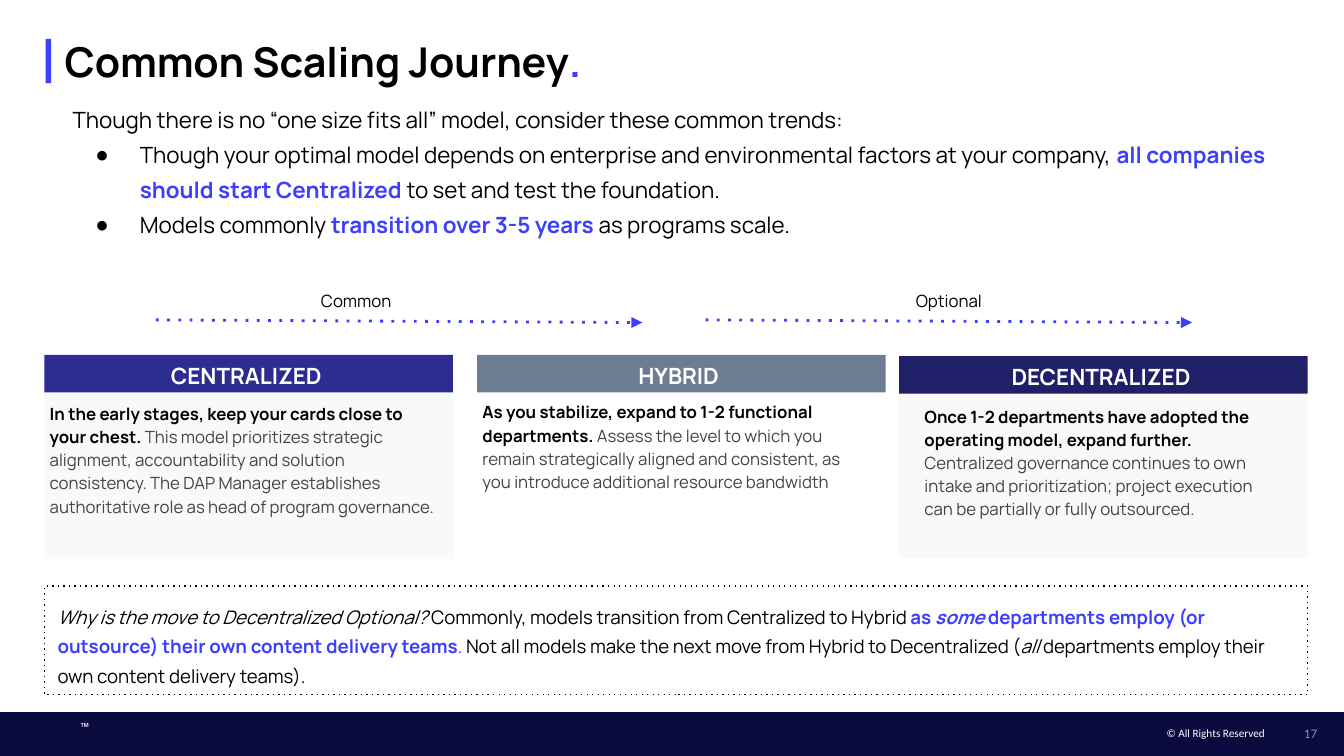
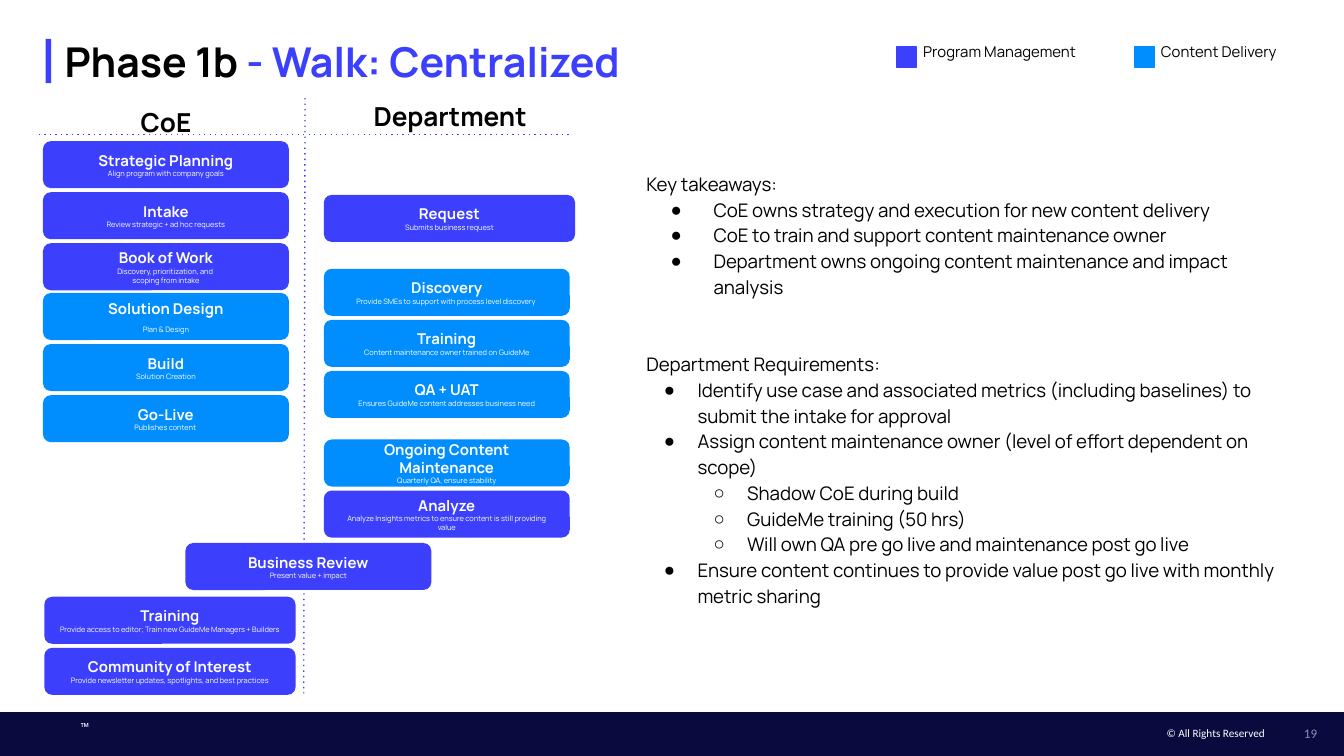
from lxml import etree
from pptx import Presentation
from pptx.dml.color import RGBColor
from pptx.enum.shapes import MSO_CONNECTOR, MSO_SHAPE
from pptx.enum.text import MSO_ANCHOR, MSO_AUTO_SIZE, PP_ALIGN
from pptx.oxml.ns import qn
from pptx.util import Pt

PX = 9144  # 100 px to the inch
RECT, ROUNDED = MSO_SHAPE.RECTANGLE, MSO_SHAPE.ROUNDED_RECTANGLE
STRAIGHT = MSO_CONNECTOR.STRAIGHT
TOP, MIDDLE = MSO_ANCHOR.TOP, MSO_ANCHOR.MIDDLE
LEFT, CENTER, RIGHT = PP_ALIGN.LEFT, PP_ALIGN.CENTER, PP_ALIGN.RIGHT
NO_FIT = MSO_AUTO_SIZE.NONE

BLUE, SKY, NAVY = "3C40FD", "008EFF", "0A0A3F"
BLACK, WHITE, GREY = "000000", "FFFFFF", "434343"
PLAIN = {}
ACCENT = {"color": BLUE}
STRONG = {"color": BLUE, "bold": True}
ITALIC = {"italic": True}
SMALL = {"size": 4, "bold": False}
TIGHT = (4, 2, 4, 2)
FOOTER = (7, 4, 7, 4)
color = RGBColor.from_string


def set_box(box, at, paras=(), fill=None, line=None, margins=(10, 10, 10, 10),
            anchor=TOP, align=LEFT, spacing=1.0, **base):
    """Move and format a shape, then fill it with paragraphs of (text, changes) runs."""
    for name, value in zip(("left", "top", "width", "height"), at):
        setattr(box, name, value * PX)
    box.shadow.inherit = False
    for target, shade in ((box.fill, fill), (box.line.fill, line)):
        if shade:
            target.solid()
            target.fore_color.rgb = color(shade)
        else:
            target.background()
    frame = box.text_frame
    frame.word_wrap, frame.auto_size, frame.vertical_anchor = True, NO_FIT, anchor
    for side, value in zip(("left", "top", "right", "bottom"), margins):
        setattr(frame, f"margin_{side}", value * PX)
    for index, runs in enumerate(paras):
        para = frame.add_paragraph() if index else frame.paragraphs[0]
        para.alignment, para.line_spacing, para.space_before = align, spacing, Pt(0)
        for text, changes in runs:
            look = {"name": "Manrope", "size": 9, "bold": False, "italic": False,
                    "color": BLACK, **base, **changes}
            span = para.add_run()
            span.text = text
            span.font.color.rgb = color(look.pop("color"))
            look["size"] = Pt(look["size"])
            for name, value in look.items():
                setattr(span.font, name, value)
    return box


def add_dotted_line(page, ends, width, arrow=False):
    line = page.shapes.add_connector(STRAIGHT, *(value * PX for value in ends))
    line.line.color.rgb = color(BLUE)
    line.line.width = Pt(width)
    properties = line._element.spPr
    outline = properties.find(qn("a:ln"))
    etree.SubElement(outline, qn("a:prstDash"), val="dot")
    if arrow:
        etree.SubElement(outline, qn("a:tailEnd"), type="triangle")
    etree.SubElement(properties, qn("a:effectLst"))


deck = Presentation()
deck.slide_width = 1000 * PX
deck.slide_height = deck.slide_width * 9 // 16

# Shared frame: footer band, accent bar and title
pages = []
for number, title in (
    ("17", [("Common Scaling Journey", PLAIN), (".", ACCENT)]),
    ("19", [("Phase 1b ", PLAIN), ("- Walk: Centralized", ACCENT)]),
):
    page = deck.slides.add_slide(deck.slide_layouts[1])
    pages.append(page)
    set_box(page.shapes.add_shape(RECT, 0, 0, 0, 0), (0, 530, 1000, 33), fill=NAVY)
    set_box(page.shapes.add_shape(RECT, 0, 0, 0, 0), (34, 29, 4, 33), fill=BLUE)
    for at, text, align, look in (
        ((948, 535, 39, 21), number, RIGHT, {"name": "Calibri", "size": 7, "color": "8296B0"}),
        ((53, 534, 17, 14), "™", CENTER, {"name": "Open Sans", "size": 6, "color": WHITE}),
        ((861, 535, 108, 21), "© All Rights Reserved", LEFT,
         {"name": "Calibri", "size": 6, "color": WHITE}),
    ):
        set_box(page.shapes.add_textbox(0, 0, 0, 0), at, [[(text, look)]],
                margins=FOOTER, anchor=MIDDLE, align=align)
    set_box(page.shapes.title, (38, 27, 771, 38), [title], margins=(10, 0, 0, 0),
            size=22, bold=True)
journey, phase = pages

# Scaling journey
trends = set_box(journey.placeholders[1], (44, 63, 910, 119), [
    [("Though there is no “one size fits all” model, consider these common trends:", PLAIN)],
    [("Though your optimal model depends on enterprise and environmental factors at "
      "your company, ", PLAIN),
     ("all companies should start Centralized", STRONG),
     (" to set and test the foundation.", PLAIN)],
    [("Models commonly ", PLAIN), ("transition over 3-5 years", STRONG),
     (" as programs scale.", PLAIN)],
], spacing=1.3, size=12)

for panel in ((33, 290, 304, 126), (669, 276, 304, 139)):
    box = set_box(journey.shapes.add_shape(RECT, 0, 0, 0, 0), panel, fill="E7E6E6")
    shade = box._element.spPr.find(qn("a:solidFill"))[0]
    etree.SubElement(shade, qn("a:alpha"), val="24000")

for name, fill, left, top, label_left, at, margins, lead, rest in (
    ("CENTRALIZED ", "2D2D91", 33, 264, 58, (33, 296, 304, 100), (4, 2, 10, 2),
     "In the early stages, keep your cards close to your chest. ",
     "This model prioritizes strategic alignment, accountability and solution consistency. "
     "The DAP Manager establishes authoritative role as head of program governance."),
    ("HYBRID", "6B7C93", 355, 264, 378, (355, 295, 304, 97), (4, 2, 22, 2),
     "As you stabilize, expand to 1-2 functional departments. ",
     "Assess the level to which you remain strategically aligned and consistent, as you "
     "introduce additional resource bandwidth"),
    ("DECENTRALIZED ", "202069", 669, 265, 694, (678, 290, 295, 105), (10, 10, 29, 10),
     "Once 1-2 departments have adopted the operating model, expand further. ",
     "Centralized governance continues to own intake and prioritization; project execution "
     "can be partially or fully outsourced."),
):
    set_box(journey.shapes.add_shape(RECT, 0, 0, 0, 0), (left, top, 304, 28), fill=fill)
    set_box(journey.shapes.add_textbox(0, 0, 0, 0), (label_left, top, 254, 28),
            [[(name, PLAIN)]], margins=TIGHT, anchor=MIDDLE, align=CENTER, spacing=1.15,
            size=12, bold=True, color=WHITE)
    set_box(journey.shapes.add_textbox(0, 0, 0, 0), at,
            [[(lead, {"bold": True}), (rest, {"color": GREY})]],
            margins=margins, spacing=1.15)

for start, label_left, label in ((116, 202, "Common"), (525, 643, "Optional")):
    add_dotted_line(journey, (start, 238, start + 362, 240), 1.5, arrow=True)
    set_box(journey.shapes.add_textbox(0, 0, 0, 0), (label_left, 208, 126, 35),
            [[(label, PLAIN)]], margins=(10, 8, 10, 10), align=CENTER)

note = set_box(journey.shapes.add_shape(RECT, 0, 0, 0, 0), (33, 436, 940, 81), [[
    ("Why is the move to Decentralized Optional? ", ITALIC),
    ("Commonly, models transition from Centralized to Hybrid ", PLAIN),
    ("as ", STRONG),
    ("some", {**STRONG, **ITALIC}),
    (" departments employ (or outsource) their own content delivery teams", STRONG),
    (".", ACCENT),
    (" Not all models make the next move from Hybrid to Decentralized (", PLAIN),
    ("all", ITALIC),
    (" departments employ their own content delivery teams).", PLAIN),
]], line=BLACK, spacing=1.3, size=10)
note.line.width = Pt(0.75)
etree.SubElement(note._element.spPr.find(qn("a:ln")), qn("a:prstDash"), val="dot")

# Phase 1b: swimlanes
add_dotted_line(phase, (227, 73, 226, 516), 0.75)
add_dotted_line(phase, (29, 100, 425, 100), 0.75)
for at, heading in (((33, 69, 181, 44), "CoE"), ((257, 65, 156, 44), "Department")):
    set_box(phase.shapes.add_textbox(0, 0, 0, 0), at, [[(heading, PLAIN)]],
            align=CENTER, size=14, bold=True)

for left, top, width, steps in (
    (32, 105, 183, (
        ("Strategic Planning", "Align program with company goals", BLUE),
        ("Intake", "Review strategic + ad hoc requests", BLUE),
        ("Book of Work", "Discovery, prioritization, and \nscoping from intake", BLUE),
        ("Solution Design", "Plan & Design", SKY),
        ("Build", "Solution Creation", SKY),
        ("Go-Live", "Publishes content ", SKY))),
    (241, 145, 187, (("Request", "Submits business request", BLUE),)),
    (241, 200, 183, (
        ("Discovery", "Provide SMEs to support with process level discovery ", SKY),
        ("Training", "Content maintenance owner trained on GuideMe", SKY),
        ("QA + UAT", "Ensures GuideMe content addresses business need", SKY))),
    (241, 327, 183, (
        ("Ongoing Content Maintenance", "Quarterly QA, ensure stability", SKY),
        ("Analyze", "Analyze Insights metrics to ensure content is still providing value",
         BLUE))),
    (138, 404, 183, (("Business Review", "Present value + impact", BLUE),)),
    (33, 444, 187, (
        ("Training", "Provide access to editor; Train new GuideMe Managers + Builders", BLUE),
        ("Community of Interest", "Provide newsletter updates, spotlights, and best practices",
         BLUE))),
):
    for row, (name, detail, fill) in enumerate(steps):
        paras = [[(name, PLAIN)]] + [[(text, SMALL)] for text in detail.split("\n")]
        card = set_box(phase.shapes.add_shape(ROUNDED, 0, 0, 0, 0),
                       (left, top + round(37.8 * row), width, 35), paras, fill=fill,
                       anchor=MIDDLE, align=CENTER, size=8, bold=True, color=WHITE)
        if name == "Solution Design":
            card.text_frame.paragraphs[1].space_before = Pt(4)

for left, fill, label, width in ((667, BLUE, "Program Management", 172),
                                 (844, SKY, "Content Delivery", 144)):
    set_box(phase.shapes.add_shape(RECT, 0, 0, 0, 0), (left, 35, 15, 15), fill=fill, line=fill)
    set_box(phase.shapes.add_textbox(0, 0, 0, 0), (left + 10, 26, width, 34),
            [[(label, PLAIN)]], margins=(10, 6, 10, 10), size=8)

takeaways = set_box(phase.placeholders[1], (471, 116, 492, 347), [[(text, PLAIN)] for text in (
    "Key takeaways:",
    "CoE owns strategy and execution for new content delivery",
    "CoE to train and support content maintenance owner",
    "Department owns ongoing content maintenance and impact analysis",
    "Department Requirements:",
    "Identify use case and associated metrics (including baselines) to submit the intake "
    "for approval",
    "Assign content maintenance owner (level of effort dependent on scope)",
    "Shadow CoE during build",
    "GuideMe training (50 hrs)",
    "Will own QA pre go live and maintenance post go live",
    "Ensure content continues to provide value post go live with monthly metric sharing",
)], spacing=1.15, size=10)
takeaways.text_frame.paragraphs[4].space_before = Pt(27.5)

# Bullets: level, left indent, hanging indent, mark
HEAD = (0, 0, 0, None)
TREND, TAKEAWAY = (0, 50, 33, "●"), (0, 50, 32, "●")
NEED, SUBNEED = (0, 38, 25, "●"), (1, 75, 25, "○")
for box, kinds in (
    (trends, [HEAD] + [TREND] * 2),
    (takeaways, [HEAD] + [TAKEAWAY] * 3 + [HEAD] + [NEED] * 2 + [SUBNEED] * 3 + [NEED]),
):
    for para, (level, indent, hanging, mark) in zip(box.text_frame.paragraphs, kinds):
        para.level = level
        properties = para._p.get_or_add_pPr()
        properties.set("marL", str(indent * PX))
        properties.set("indent", str(-hanging * PX))
        if mark:
            shade = etree.SubElement(properties, qn("a:buClr"))
            etree.SubElement(shade, qn("a:srgbClr"), val=BLACK)
            etree.SubElement(properties, qn("a:buChar"), char=mark)
        else:
            etree.SubElement(properties, qn("a:buNone"))

deck.save("out.pptx")
